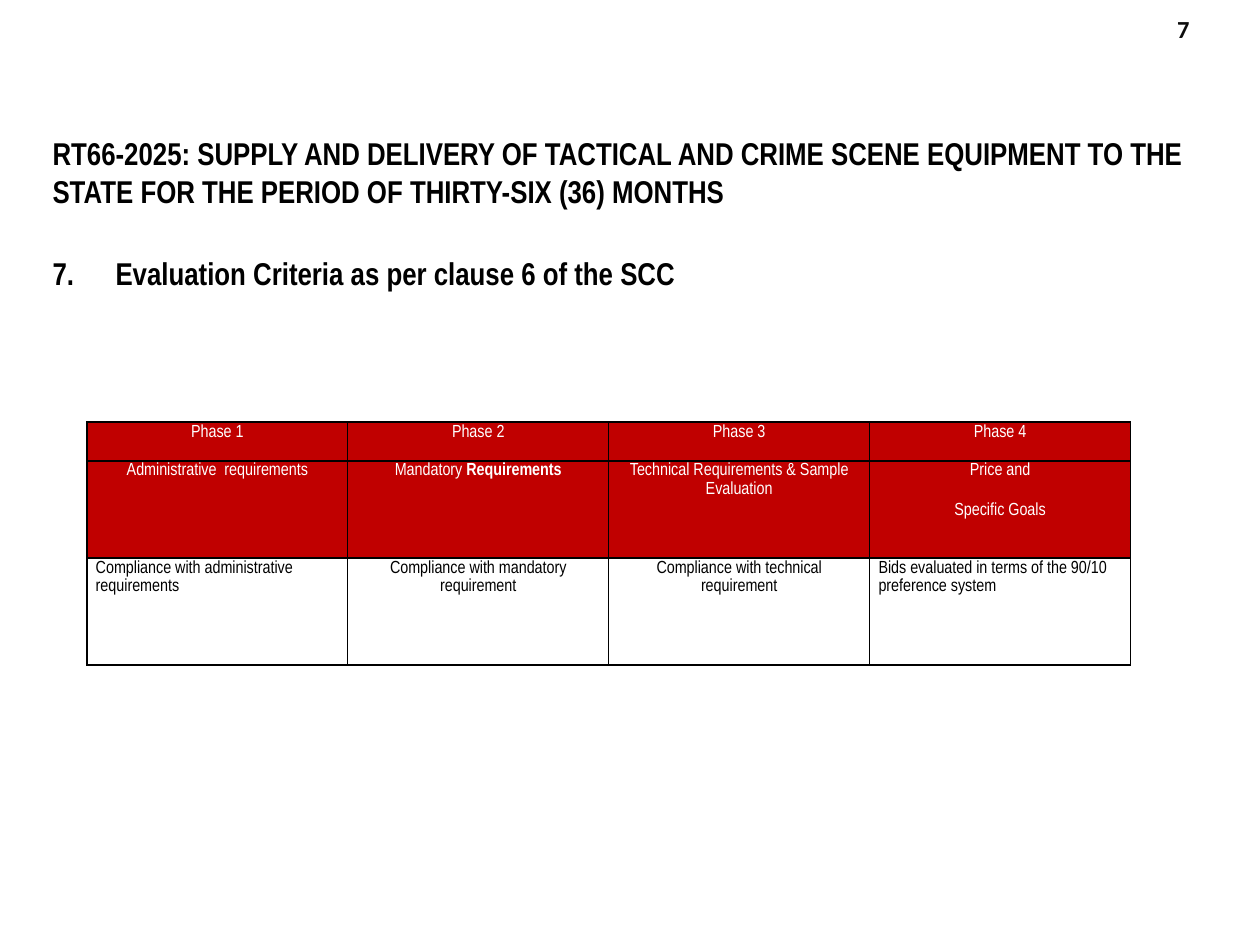
from dataclasses import dataclass

import pptx
import pptx.dml.color
import pptx.enum.text
import pptx.oxml
import pptx.oxml.ns
import pptx.util
from pptx.util import Cm

Align = pptx.enum.text.PP_ALIGN
Anchor = pptx.enum.text.MSO_ANCHOR


@dataclass(frozen=True)
class Theme:
    black: str = "000000"
    white: str = "FFFFFF"
    red: str = "C00000"
    page_grey: str = "0D0D0D"
    body_font: str = "Arial Narrow"
    page_font: str = "Calibri"
    heading_size: float = 18
    page_size: float = 14
    table_size: float = 10
    border_width: float = 1


@dataclass(frozen=True)
class TextBox:
    text: str
    left: float
    top: float
    width: float
    height: float
    size: float
    font: str
    color: str
    anchor: Anchor
    align: Align = Align.LEFT
    line_spacing: float = 1.0
    number: int | None = None


@dataclass(frozen=True)
class Phase:
    name: str
    criteria: tuple[str, ...]
    compliance: str
    compliance_align: Align
    bold_word: str = ""


THEME = Theme()
MARGIN_LEFT, CONTENT_WIDTH = 0.81, 23.72
TABLE_LEFT, TABLE_TOP, COLUMN_WIDTH = 1.75, 8.51, 5.26
ROW_HEIGHTS = (0.78, 1.96, 2.16)

TEXT_BOXES = (
    TextBox("7", 23.11, 0, 1.12, 1.14, THEME.page_size, THEME.page_font,
            THEME.page_grey, Anchor.MIDDLE, Align.RIGHT),
    TextBox("RT66-2025: SUPPLY AND DELIVERY OF TACTICAL AND CRIME SCENE EQUIPMENT TO THE "
            "STATE FOR THE PERIOD OF THIRTY-SIX (36) MONTHS",
            MARGIN_LEFT, 1.73, CONTENT_WIDTH, 2.62, THEME.heading_size, THEME.body_font,
            THEME.black, Anchor.BOTTOM),
    TextBox("Evaluation Criteria as per clause 6 of the SCC",
            MARGIN_LEFT, 5.08, CONTENT_WIDTH, 13.39, THEME.heading_size, THEME.body_font,
            THEME.black, Anchor.TOP, line_spacing=0.9, number=7),
)

PHASES = (
    Phase("Phase 1", ("Administrative  requirements",),
          "Compliance with administrative requirements", Align.LEFT),
    Phase("Phase 2", ("Mandatory ",),
          "Compliance with mandatory requirement", Align.CENTER, "Requirements"),
    Phase("Phase 3", ("Technical Requirements & Sample Evaluation",),
          "Compliance with technical requirement", Align.CENTER),
    Phase("Phase 4", ("Price and", "Specific Goals"),
          "Bids evaluated in terms of the 90/10 preference system", Align.LEFT),
)


def rgb(color: str) -> pptx.dml.color.RGBColor:
    return pptx.dml.color.RGBColor.from_string(color)


def style_font(font, name: str, size: float, color: str) -> None:
    font.name = name
    font.size = pptx.util.Pt(size)
    font.color.rgb = rgb(color)


def number_paragraph(paragraph, start: int) -> None:
    properties = paragraph._p.get_or_add_pPr()
    properties.set("marL", str(Cm(1.27)))
    properties.set("indent", str(Cm(-1.27)))
    properties.append(pptx.oxml.parse_xml(
        f'<a:buAutoNum {pptx.oxml.ns.nsdecls("a")} type="arabicPeriod" startAt="{start}"/>'))


def add_text_box(slide, box: TextBox) -> None:
    shape = slide.shapes.add_textbox(Cm(box.left), Cm(box.top), Cm(box.width), Cm(box.height))
    frame = shape.text_frame
    frame.word_wrap = True
    frame.vertical_anchor = box.anchor
    paragraph = frame.paragraphs[0]
    paragraph.text = box.text
    paragraph.alignment = box.align
    paragraph.line_spacing = box.line_spacing
    if box.number is not None:
        number_paragraph(paragraph, box.number)
    style_font(paragraph.font, box.font, box.size, box.color)
    paragraph.font.bold = True


def add_borders(cell) -> None:
    properties = cell._tc.get_or_add_tcPr()
    for position, side in enumerate(("lnL", "lnR", "lnT", "lnB")):
        properties.insert(position, pptx.oxml.parse_xml(
            f'<a:{side} {pptx.oxml.ns.nsdecls("a")} w="{pptx.util.Pt(THEME.border_width)}">'
            f'<a:solidFill><a:srgbClr val="{THEME.black}"/></a:solidFill></a:{side}>'))


def fill_cell(cell, lines: tuple[str, ...], fill: str, color: str,
              align: Align = Align.CENTER, bold_word: str = "") -> None:
    cell.fill.solid()
    cell.fill.fore_color.rgb = rgb(fill)
    cell.margin_left = cell.margin_right = Cm(0.18)
    cell.margin_top = cell.margin_bottom = 0
    frame = cell.text_frame
    frame.text = "\n".join(lines)
    for position, paragraph in enumerate(frame.paragraphs):
        paragraph.alignment = align
        paragraph.line_spacing = 1.15
        paragraph.space_before = pptx.util.Pt(6 if position else 0)
        paragraph.space_after = pptx.util.Pt(6)
        style_font(paragraph.font, THEME.body_font, THEME.table_size, color)
    if bold_word:
        run = frame.paragraphs[-1].add_run()
        run.text = bold_word
        run.font.bold = True
    add_borders(cell)


def add_phase_table(slide, phases: tuple[Phase, ...]) -> None:
    table = slide.shapes.add_table(
        len(ROW_HEIGHTS), len(phases), Cm(TABLE_LEFT), Cm(TABLE_TOP),
        Cm(COLUMN_WIDTH * len(phases)), Cm(sum(ROW_HEIGHTS))).table
    table.first_row = table.horz_banding = False
    for row, height in zip(table.rows, ROW_HEIGHTS):
        row.height = Cm(height)
    for column, phase in enumerate(phases):
        table.columns[column].width = Cm(COLUMN_WIDTH)
        fill_cell(table.cell(0, column), (phase.name,), THEME.red, THEME.white)
        fill_cell(table.cell(1, column), phase.criteria, THEME.red, THEME.white,
                  bold_word=phase.bold_word)
        fill_cell(table.cell(2, column), (phase.compliance,), THEME.white, THEME.black,
                  phase.compliance_align)


def main() -> None:
    presentation = pptx.Presentation()
    presentation.slide_width = Cm(25.4)
    presentation.slide_height = Cm(19.05)
    slide = presentation.slides.add_slide(presentation.slide_layouts[6])
    for box in TEXT_BOXES:
        add_text_box(slide, box)
    add_phase_table(slide, PHASES)
    presentation.save("out.pptx")


if __name__ == "__main__":
    main()
